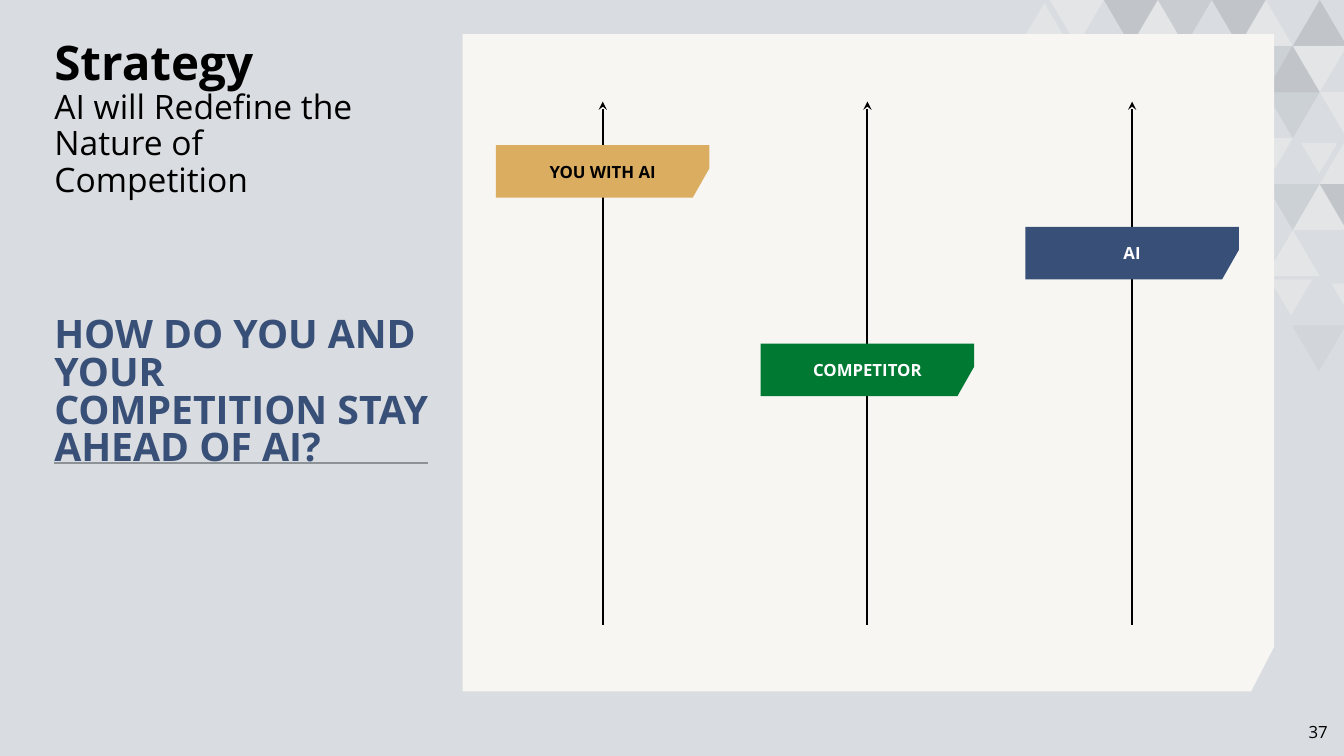
from pptx import Presentation
from pptx.dml.color import RGBColor
from pptx.enum.shapes import MSO_CONNECTOR
from pptx.enum.text import MSO_ANCHOR, MSO_AUTO_SIZE, PP_ALIGN
from pptx.oxml.ns import qn
from pptx.util import Cm, Pt
from lxml.etree import SubElement

FONT = "Open Sans"
COLORS = {
    "background": "D9DCE0", "panel": "F7F6F3", "dark": "303F48",
    "slate": "49636F", "black": "000000", "white": "FFFFFF",
    "gold": "DBAD60", "green": "007932", "navy": "384F77", "rule": "8D9296",
}
GRID_TRIANGLES = [
    (0, 0, "down", "panel", 36), (2, 0, "down", "dark", 14),
    (3, 0, "up", "panel", 36), (4, 0, "down", "dark", 9),
    (6, 0, "down", "dark", 14), (7, 0, "up", "panel", 36),
    (9, 0, "up", "dark", 14), (7, 1, "down", "slate", 9),
    (8, 1, "up", "dark", 14), (9, 1, "down", "panel", 36),
    (8, 2, "down", "slate", 9), (10, 2, "down", "panel", 36),
    (7, 3, "down", "panel", 36), (10, 3, "up", "panel", 32),
    (8, 4, "down", "slate", 9), (9, 4, "up", "panel", 36),
    (10, 4, "down", "dark", 14), (8, 5, "up", "panel", 36),
]
LOOSE_TRIANGLES = [
    (-0.65, 0.08, 1.02, 0.86, "up", "panel", 32),
    (6.33, 3.61, 0.91, 0.76, "down", "panel", 32),
    (5.54, 7.04, 1.07, 0.91, "down", "panel", 32),
    (6.1, 8.2, 1.36, 1.16, "down", "dark", 4),
    (7.09, 7.14, 0.66, 0.56, "down", "panel", 32),
]
COMPETITORS = [
    ("YOU WITH AI", 2.8, "gold", "black"),
    ("COMPETITOR", 7.8, "green", "white"),
    ("AI", 4.86, "navy", "white"),
]


def rgb(name):
    return RGBColor.from_string(COLORS[name])


def add_polygon(s, points, color, opacity=100):
    corners = [(Cm(x), Cm(y)) for x, y in points]
    builder = s.shapes.build_freeform(*corners[0])
    builder.add_line_segments(corners[1:], close=True)
    sp = builder.convert_to_shape()
    sp.shadow.inherit = False
    sp.fill.solid()
    sp.fill.fore_color.rgb = rgb(color)
    sp.line.fill.background()
    if opacity < 100:
        tint = sp.fill._xPr.find(".//" + qn("a:srgbClr"))
        SubElement(tint, qn("a:alpha"), val=str(opacity * 1000))
    return sp


def add_cut_corner(s, box, cut_x, cut_y, color):
    x, y, w, h = box
    points = [(x, y), (x + w, y), (x + w, y + h - cut_y),
              (x + w - cut_x, y + h), (x, y + h)]
    return add_polygon(s, points, color)


def add_triangle(s, x, y, w, h, direction, color, opacity):
    tip, base = (y, y + h) if direction == "up" else (y + h, y)
    add_polygon(s, [(x, base), (x + w / 2, tip), (x + w, base)], color, opacity)


def add_line(s, start, end, color, arrow=False):
    line = s.shapes.add_connector(
        MSO_CONNECTOR.STRAIGHT, *[Cm(v) for v in (*start, *end)])
    line.line.color.rgb = rgb(color)
    line.line.width = Pt(1.5)
    if arrow:
        SubElement(line.line._get_or_add_ln(), qn("a:tailEnd"), type="stealth")
    SubElement(line._element.spPr, qn("a:effectLst"))


def format_run(r, size, color, bold):
    r.font.name = FONT
    r.font.size = Pt(size)
    r.font.bold = bold
    r.font.color.rgb = rgb(color)


def write(sp, text, size, color, bold, align, anchor):
    tf = sp.text_frame
    tf.word_wrap = True
    tf.vertical_anchor = anchor
    p = tf.paragraphs[0]
    p.text = text
    p.alignment = align
    for r in p.runs:
        format_run(r, size, color, bold)
    return tf


def add_triangle_pattern(s, box):
    left, top, half_width, row_height = box
    for column, row, direction, color, opacity in GRID_TRIANGLES:
        add_triangle(s, left + column * half_width, top + row * row_height,
                     2 * half_width, row_height, direction, color, opacity)
    for x, y, w, h, direction, color, opacity in LOOSE_TRIANGLES:
        add_triangle(s, left + x, top + y, w, h, direction, color, opacity)


def add_title(s, box):
    title = s.shapes.title
    title.left, title.top, title.width, title.height = [Cm(v) for v in box]
    tf = write(title, "Strategy\vAI will Redefine the Nature of Competition",
               34, "black", True, PP_ALIGN.LEFT, MSO_ANCHOR.TOP)
    tf.auto_size = MSO_AUTO_SIZE.NONE
    tf.margin_left = 0
    p = tf.paragraphs[0]
    p.line_spacing = 0.9
    format_run(p.runs[1], 24, "black", False)


def add_question(s, box):
    x, y, w, h = box
    sp = s.shapes.add_textbox(*[Cm(v) for v in box])
    tf = write(sp, "HOW DO YOU AND YOUR COMPETITION STAY AHEAD OF AI?",
               28, "navy", True, PP_ALIGN.LEFT, MSO_ANCHOR.MIDDLE)
    tf.margin_left = 0
    tf.paragraphs[0].line_spacing = 0.8
    rule_y = y + h - 0.99
    add_line(s, (x, rule_y), (x + w - 0.36, rule_y), "rule")


def add_race(s, box):
    x, y, w, h = box
    label_width, label_height, lane_gap = 5.38, 1.32, 6.67
    add_cut_corner(s, box, 0.58, 1.12, "panel")
    for lane, (name, offset, color, text_color) in enumerate(COMPETITORS):
        center = x + 3.53 + lane * lane_gap
        add_line(s, (center, y + h - 1.68), (center, y + 1.7), "black", True)
        label = add_cut_corner(
            s, (center - label_width / 2, y + offset, label_width, label_height),
            0.42, 0.74, color)
        write(label, name, 12, text_color, True, PP_ALIGN.CENTER, MSO_ANCHOR.MIDDLE)


def add_page_number(s, box):
    sp = s.shapes.add_textbox(*[Cm(v) for v in box])
    write(sp, "37", 12, "black", False, PP_ALIGN.RIGHT, MSO_ANCHOR.MIDDLE)


def main():
    prs = Presentation()
    prs.slide_width, prs.slide_height = Cm(33.87), Cm(19.05)
    s = prs.slides.add_slide(prs.slide_layouts[5])
    s.background.fill.solid()
    s.background.fill.fore_color.rgb = rgb("background")
    add_triangle_pattern(s, (26.46, 0, 0.68, 1.16))
    add_race(s, (11.66, 0.86, 20.45, 16.56))
    add_title(s, (1.37, 0.86, 8.48, 2.84))
    add_question(s, (1.37, 7.21, 9.78, 5.44))
    add_page_number(s, (26.09, 17.93, 7.62, 1.02))
    prs.save("out.pptx")


if __name__ == "__main__":
    main()
